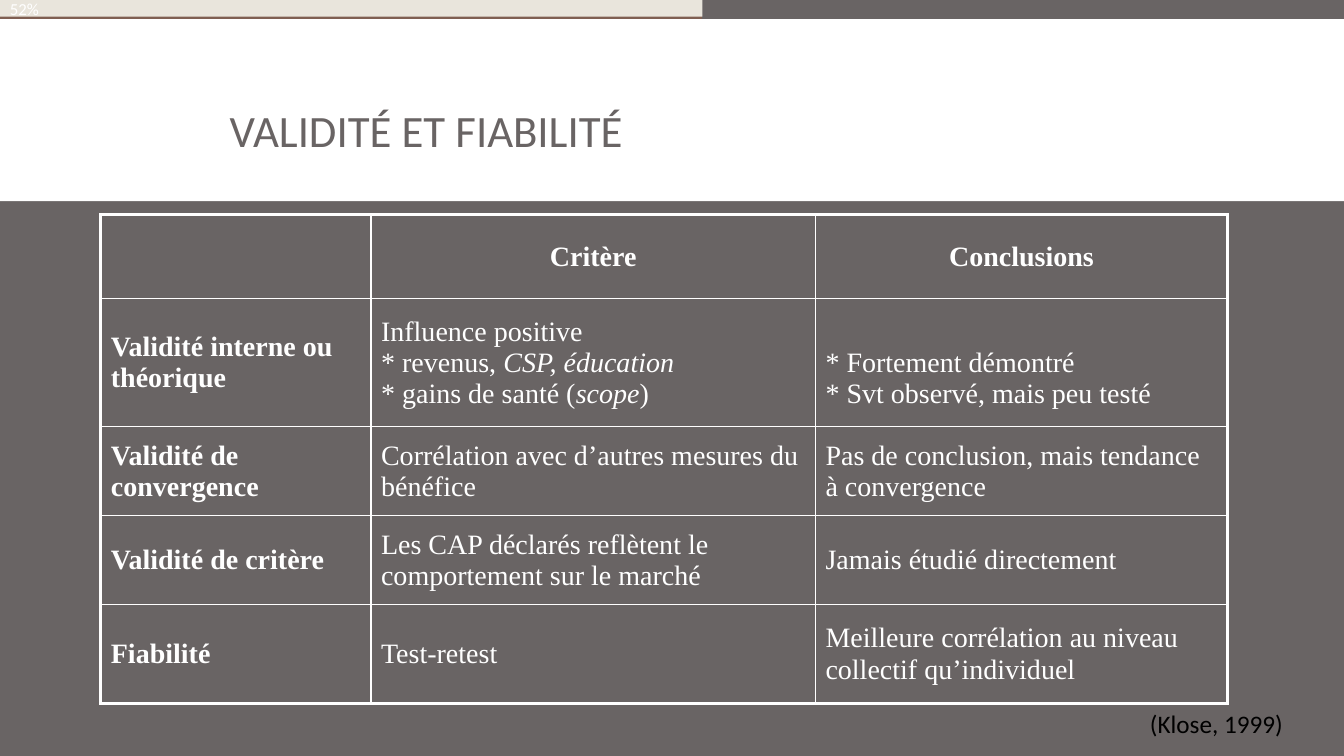
from dataclasses import dataclass

from lxml import etree
from pptx import Presentation
from pptx import util as u
from pptx.dml.color import RGBColor
from pptx.enum import shapes, text
from pptx.oxml.ns import qn


@dataclass(frozen=True)
class Theme:
    slate: str = "696464"
    white: str = "FFFFFF"
    black: str = "000000"
    cream: str = "E9E5DC"
    rust: str = "7F5F52"
    sans: str = "Calibri"
    serif: str = "Times New Roman"
    title: int = 32
    body: int = 20
    source: int = 18
    progress: int = 12
    outer_line: float = 2.25
    inner_line: float = 1


class SlideBuilder:
    def __init__(self, slide, theme):
        self.slide, self.theme = slide, theme
        background = slide.background.fill
        background.solid()
        background.fore_color.rgb = RGBColor.from_string(theme.slate)

    def run(self, paragraph, words, size, color, font, bold=False, italic=False):
        run = paragraph.add_run()
        run.text = words
        run.font.size = u.Pt(size)
        run.font.name = font
        run.font.bold, run.font.italic = bold, italic
        run.font.color.rgb = RGBColor.from_string(color)

    def band(self, left, top, width, height, color):
        band = self.slide.shapes.add_shape(
            shapes.MSO_SHAPE.RECTANGLE, *map(u.Pt, (left, top, width, height)))
        band.shadow.inherit = False
        band.fill.solid()
        band.fill.fore_color.rgb = RGBColor.from_string(color)
        band.line.fill.background()
        return band

    def rule(self, left, right, y, color, weight):
        rule = self.slide.shapes.add_connector(
            shapes.MSO_CONNECTOR.STRAIGHT, *map(u.Pt, (left, y, right, y)))
        rule.line.color.rgb = RGBColor.from_string(color)
        rule.line.width = u.Pt(weight)
        etree.SubElement(rule._element.spPr, qn("a:effectLst"))

    def label(self, left, top, width, height, words, size, color,
              wrap=True, anchor=text.MSO_ANCHOR.TOP, spacing=1.0):
        frame = self.slide.shapes.add_textbox(
            *map(u.Pt, (left, top, width, height))).text_frame
        frame.word_wrap = wrap
        frame.vertical_anchor = anchor
        frame.paragraphs[0].line_spacing = spacing
        self.run(frame.paragraphs[0], words, size, color, self.theme.sans)

    def borders(self, cell, weights):
        properties = cell._tc.get_or_add_tcPr()
        for side, weight in weights.items():
            line = etree.SubElement(
                properties, qn(f"a:ln{side}"), w=str(u.Pt(weight)))
            fill = etree.SubElement(line, qn("a:solidFill"))
            etree.SubElement(fill, qn("a:srgbClr"), val=self.theme.white)

    def table(self, left, top, widths, heights, rows):
        theme = self.theme
        table = self.slide.shapes.add_table(
            len(heights), len(widths),
            *map(u.Pt, (left, top, sum(widths), sum(heights)))).table
        table.first_row = table.horz_banding = False
        for column, width in zip(table.columns, widths):
            column.width = u.Pt(width)
        for row, height in zip(table.rows, heights):
            row.height = u.Pt(height)
        for r, row in enumerate(rows):
            for c, lines in enumerate(row):
                cell = table.cell(r, c)
                cell.vertical_anchor = text.MSO_ANCHOR.MIDDLE
                on_edge = {"L": c == 0, "R": c == len(widths) - 1,
                           "T": r == 0, "B": r == len(heights) - 1}
                self.borders(cell, {
                    side: theme.outer_line if edge else theme.inner_line
                    for side, edge in on_edge.items()})
                cell.fill.background()
                for n, line in enumerate(lines):
                    frame = cell.text_frame
                    paragraph = frame.add_paragraph() if n else frame.paragraphs[0]
                    if r == 0:
                        paragraph.alignment = text.PP_ALIGN.CENTER
                    # Every second piece of a line is in italics
                    for k, piece in enumerate(line):
                        self.run(paragraph, piece, theme.body, theme.white,
                                 theme.serif, r == 0 or c == 0, k % 2 == 1)
        return table


# Each cell is a list of lines, each line a list of pieces
CRITERIA = [
    [[], [["Critère"]], [["Conclusions"]]],
    [[["Validité interne ou théorique"]],
     [["Influence positive"],
      ["* revenus, ", "CSP, éducation"],
      ["* gains de santé (", "scope", ")"]],
     [["* Fortement démontré"], ["* Svt observé, mais peu testé"]]],
    [[["Validité de convergence"]],
     [["Corrélation avec d’autres mesures du bénéfice"]],
     [["Pas de conclusion, mais tendance à convergence"]]],
    [[["Validité de critère"]],
     [["Les CAP déclarés reflètent le comportement sur le marché"]],
     [["Jamais étudié directement"]]],
    [[["Fiabilité"]],
     [["Test-retest"]],
     [["Meilleure corrélation au niveau collectif qu’individuel"]]],
]


def main():
    theme = Theme()
    deck = Presentation()
    deck.slide_width, deck.slide_height = u.Pt(960), u.Pt(540)
    page = SlideBuilder(deck.slides.add_slide(deck.slide_layouts[6]), theme)

    # Title band
    page.band(0, 13.7, 960, 129.9, theme.white)
    page.label(157, 65.5, 690, 60, "VALIDITÉ ET FIABILITÉ", theme.title,
               theme.slate, anchor=text.MSO_ANCHOR.MIDDLE, spacing=0.85)

    # Validity criteria
    criteria = page.table(72, 153.4, [193, 317.5, 294.5],
                          [60, 91.5, 63.5, 63.5, 70.5], CRITERIA)
    # Conclusions line up with the second and third criteria lines
    criteria.cell(1, 2).margin_top = u.Pt(25.7)

    # Source
    page.label(814.3, 502.6, 129, 29, "(Klose, 1999)", theme.source,
               theme.black, wrap=False)

    # Progress bar
    page.rule(0, 501.8, 12.5, theme.rust, 1.5)
    progress = page.band(0, 0, 501.8, 12, theme.cream)
    progress.text_frame.vertical_anchor = text.MSO_ANCHOR.MIDDLE
    percent = progress.text_frame.paragraphs[0]
    percent.alignment = text.PP_ALIGN.LEFT
    page.run(percent, "52%", theme.progress, theme.white, theme.sans)

    deck.save("out.pptx")


if __name__ == "__main__":
    main()
